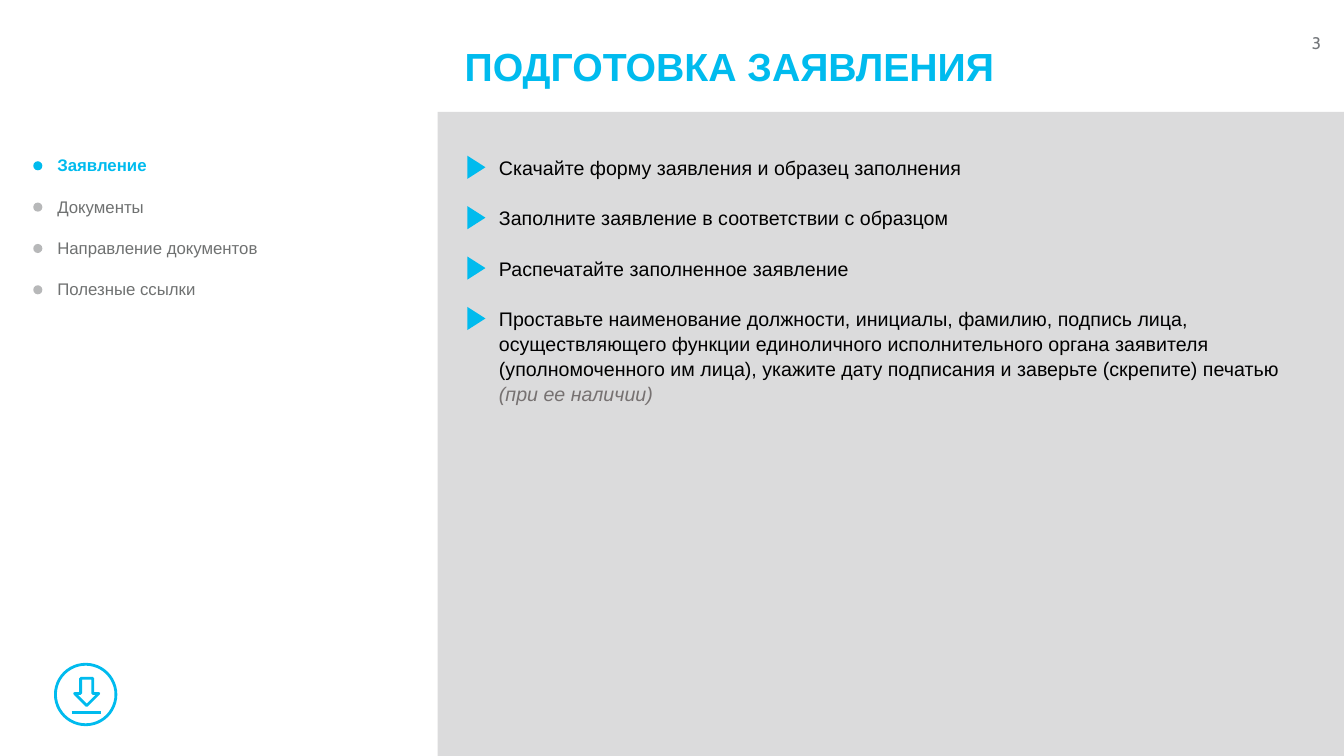
from pptx import Presentation
from pptx.dml.color import RGBColor
from pptx.enum.shapes import MSO_CONNECTOR as Wire, MSO_SHAPE as Kind
from pptx.enum.text import MSO_ANCHOR as Anchor, PP_ALIGN as Align
from pptx.oxml.ns import qn
from pptx.util import Inches, Pt
from lxml.etree import SubElement

WIDE, HIGH = 13.33, 7.5
SPLIT, TOP = 4.34, 1.11
BLUE, PANEL, DOT = "00BBEE", "DBDBDC", "B7B8B9"
BLACK, GREY = "000000", "6F7171"
MENU = ["Заявление", "Документы", "Направление документов", "Полезные ссылки"]
STEPS = [
    ["Скачайте форму заявления и образец заполнения"],
    ["Заполните заявление в соответствии с образцом"],
    ["Распечатайте заполненное заявление"],
    ["Проставьте наименование должности, инициалы, фамилию, подпись лица, "
     "осуществляющего функции единоличного исполнительного органа заявителя "
     "(уполномоченного им лица), укажите дату подписания и заверьте "
     "(скрепите) печатью ", "(при ее наличии)"],
]


def paint(color, tone):
    color.rgb = RGBColor.from_string(tone)


def shape(slide, kind, box, fill=None, line=None):
    item = slide.shapes.add_shape(kind, *map(Inches, box))
    item.shadow.inherit = False
    if fill:
        item.fill.solid()
        paint(item.fill.fore_color, fill)
    else:
        item.fill.background()
    if line:
        paint(item.line.color, line)
        item.line.width = Pt(2)
    else:
        item.line.fill.background()
    return item


def frame(slide, box):
    body = slide.shapes.add_textbox(*map(Inches, box)).text_frame
    body.word_wrap = True
    return body


def write(body, texts, size, tone, face="Arial", bold=False):
    first = body.paragraphs[0]
    para = body.add_paragraph() if first.runs else first
    for text in texts:
        para.add_run().text = text
    para.font.size, para.font.name, para.font.bold = Pt(size), face, bold
    paint(para.font.color, tone)
    return para


def header(slide, left, top, width, height):
    body = frame(slide, (left + 0.17, top - 0.04, width - 0.6, height + 0.34))
    body.vertical_anchor = Anchor.MIDDLE
    write(body, ["ПОДГОТОВКА ЗАЯВЛЕНИЯ"], 28, BLUE, bold=True).line_spacing = 0.9
    page = frame(slide, (left + width - 2.55, top + 0.28, 2.42, 0.3))
    write(page, ["3"], 12, "74777B", "Cabin").alignment = Align.RIGHT


def menu(slide, left, top, width):
    body = frame(slide, (left + 0.47, top + 0.38, width - 0.65, 1.54))
    for row, name in enumerate(MENU):
        live = row == 0
        para = write(body, [name], 12, BLUE if live else GREY, bold=live)
        para.space_after = Pt(15)
        dot = (left + 0.33, top + 0.49 + row * 0.41, 0.09, 0.09)
        shape(slide, Kind.OVAL, dot, BLUE if live else DOT)


def steps(slide, left, top, width, height):
    shape(slide, Kind.RECTANGLE, (left, top, width, height), PANEL)
    body = frame(slide, (left + 0.01, top + 0.37, width - 0.5, 2.62))
    for row, texts in enumerate(STEPS):
        para = write(body, texts, 14, BLACK)
        para._p.get_or_add_pPr().set("marL", str(Inches(0.5)))
        para.line_spacing = 1.07
        if row:
            para.space_before = Pt(18)
        for note in para.runs[1:]:
            note.font.italic = True
            paint(note.font.color, "767171")
        mark = (left + 0.27, top + 0.46 + row * 0.5, 0.23, 0.18)
        shape(slide, Kind.ISOSCELES_TRIANGLE, mark, BLUE).rotation = 90


def badge(slide, left, top, side):
    shape(slide, Kind.OVAL, (left, top, side, side), line=BLUE)
    shape(slide, Kind.DOWN_ARROW, (left + 0.19, top + 0.14, 0.24, 0.27), line=BLUE)
    ends = (left + 0.16, top + 0.48, left + 0.45, top + 0.48)
    base = slide.shapes.add_connector(Wire.STRAIGHT, *map(Inches, ends))
    paint(base.line.color, BLUE)
    base.line.width = Pt(2)
    SubElement(base._element.spPr, qn("a:effectLst"))


def main():
    deck = Presentation()
    deck.slide_width, deck.slide_height = Inches(WIDE), Inches(HIGH)
    slide = deck.slides.add_slide(deck.slide_layouts[6])
    steps(slide, SPLIT, TOP, WIDE - SPLIT, HIGH - TOP)
    header(slide, SPLIT, 0, WIDE - SPLIT, TOP)
    menu(slide, 0, TOP, SPLIT)
    badge(slide, 0.55, 6.59, 0.6)
    deck.save("out.pptx")


if __name__ == "__main__":
    main()
